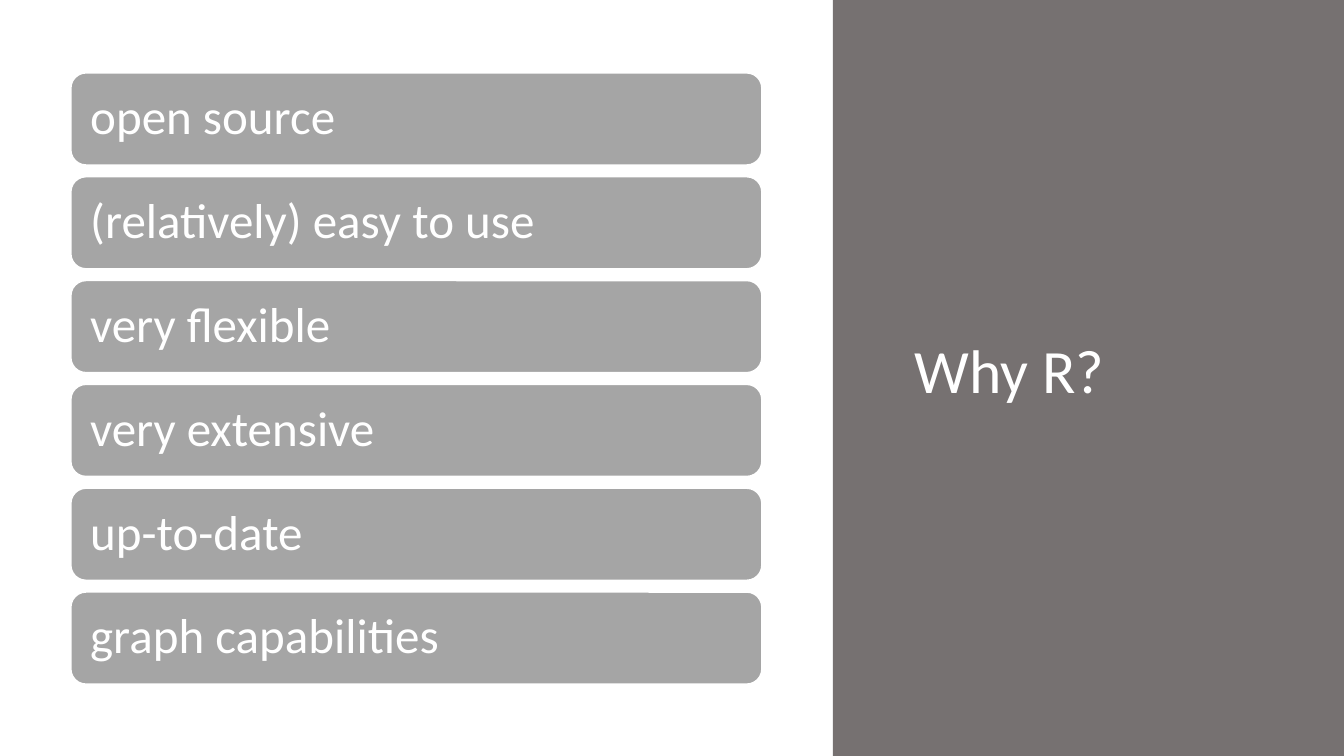
from pptx import Presentation
from pptx.dml.color import RGBColor
from pptx.enum.shapes import MSO_SHAPE
from pptx.enum.text import MSO_ANCHOR, PP_ALIGN
from pptx.util import Inches, Pt

TITLE = "Why R?"
REASONS = [
    "open source",
    "(relatively) easy to use",
    "very flexible",
    "very extensive",
    "up-to-date",
    "graph capabilities",
]

WHITE = RGBColor(0xFF, 0xFF, 0xFF)
PANEL_GRAY = RGBColor(0x76, 0x71, 0x71)
BAR_GRAY = RGBColor(0xA5, 0xA5, 0xA5)
RECT, ROUNDED = MSO_SHAPE.RECTANGLE, MSO_SHAPE.ROUNDED_RECTANGLE
MIDDLE, LEFT = MSO_ANCHOR.MIDDLE, PP_ALIGN.LEFT

BAR_LEFT, BAR_TOP, BAR_WIDTH, BAR_HEIGHT = 0.7, 0.72, 6.86, 0.92
BAR_PITCH = 1.03


def add_block(slide, shape_type, box, color):
    sp = slide.shapes.add_shape(shape_type, *map(Inches, box))
    sp.shadow.inherit = False
    sp.fill.solid()
    sp.fill.fore_color.rgb = color
    sp.line.fill.background()
    return sp


def write_text(sp, text, size, margins):
    tf = sp.text_frame
    frame_format = {"word_wrap": True, "vertical_anchor": MIDDLE}
    frame_format.update({f"margin_{side}": Inches(m) for side, m in margins.items()})
    for name, value in frame_format.items():
        setattr(tf, name, value)
    p = tf.paragraphs[0]
    p.alignment = LEFT
    p.line_spacing = 0.9
    r = p.add_run()
    r.text = text
    for name, value in {"name": "Calibri", "size": Pt(size)}.items():
        setattr(r.font, name, value)
    r.font.color.rgb = WHITE


def main():
    prs = Presentation()
    prs.slide_width, prs.slide_height = Inches(13.33), Inches(7.5)
    slide = prs.slides.add_slide(prs.slide_layouts[5])

    title = slide.shapes.title
    panel = add_block(slide, RECT, (8.26, 0, 5.07, 7.5), PANEL_GRAY)
    title._element.addprevious(panel._element)
    title_box = {"left": 8.97, "top": 0.7, "width": 4.01, "height": 6.02}
    for name, value in title_box.items():
        setattr(title, name, Inches(value))
    write_text(title, TITLE, 44, {"left": 0.1, "right": 0.1, "top": 0.05, "bottom": 0.05})

    for i, reason in enumerate(REASONS):
        box = (BAR_LEFT, BAR_TOP + i * BAR_PITCH, BAR_WIDTH, BAR_HEIGHT)
        bar = add_block(slide, ROUNDED, box, BAR_GRAY)
        bar.line.color.rgb = WHITE
        bar.line.width = Pt(1.5)
        write_text(bar, reason, 35, {"left": 0.15, "right": 0.15, "top": 0.15, "bottom": 0.15})

    prs.save("out.pptx")


if __name__ == "__main__":
    main()
